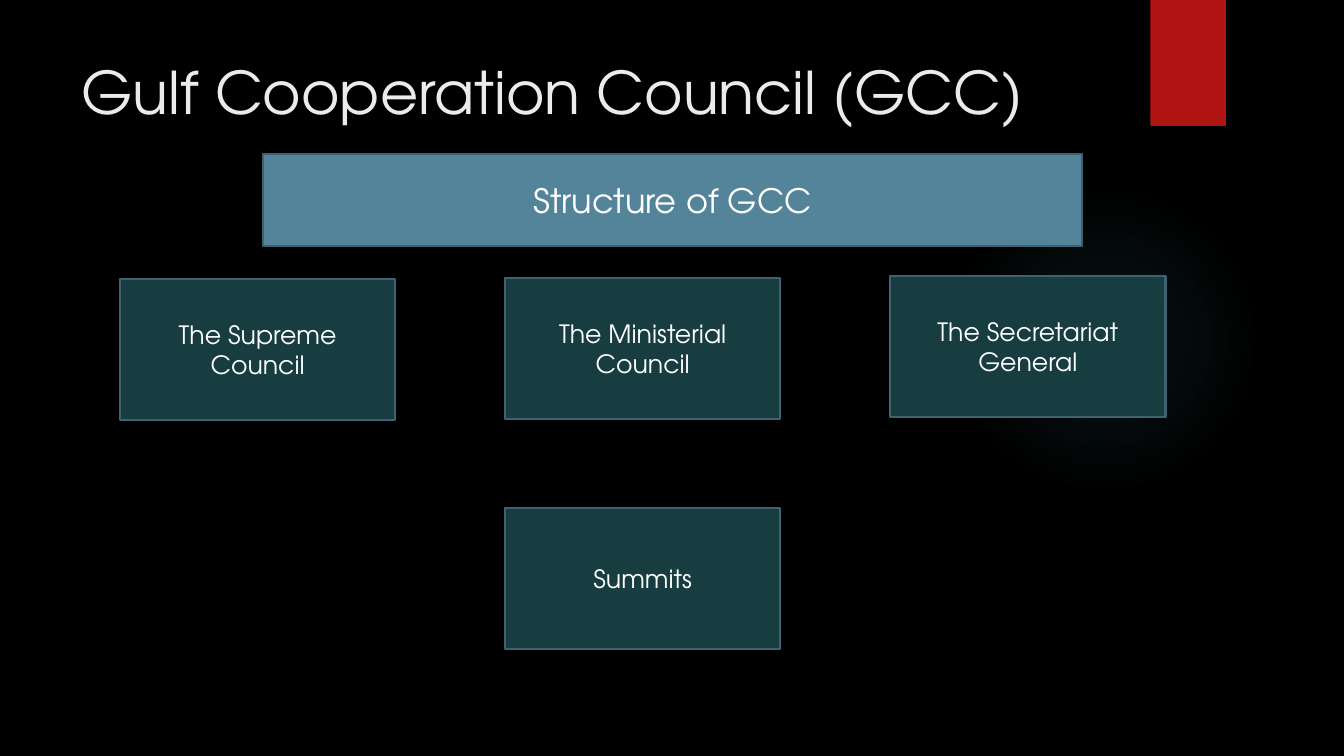
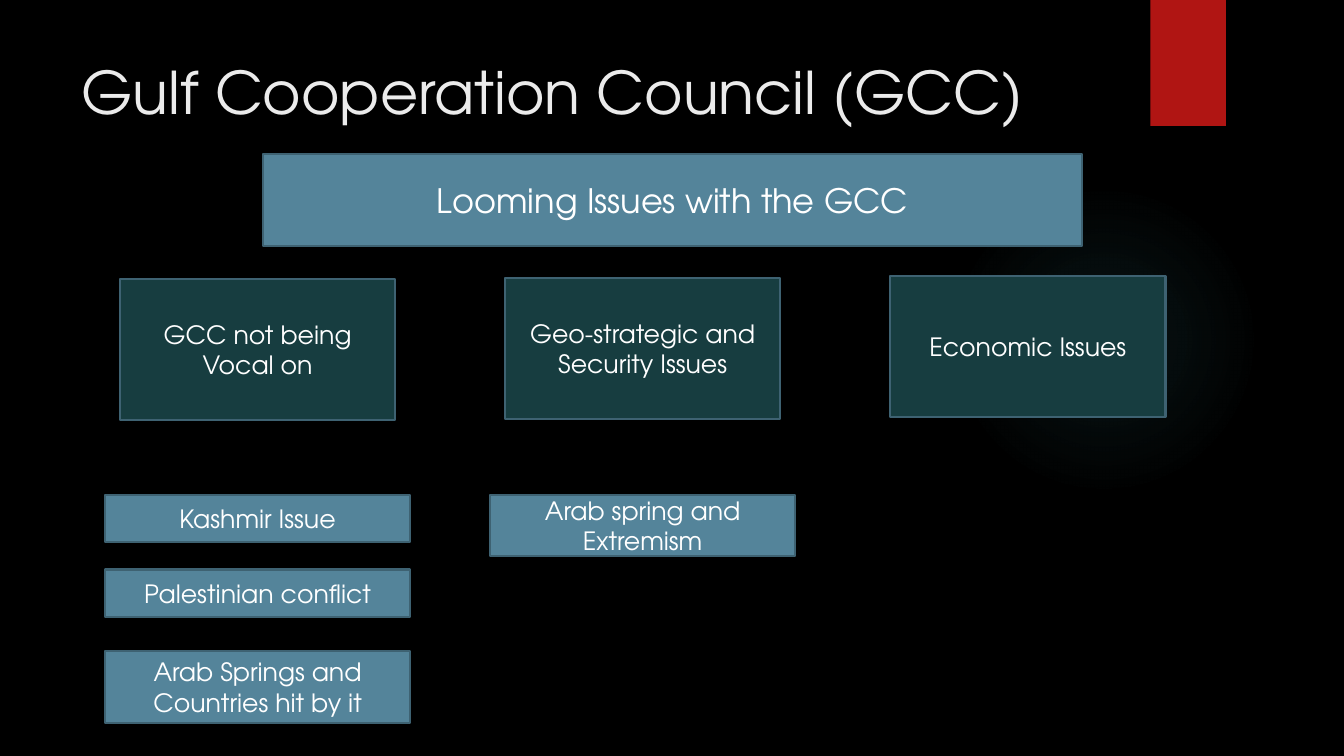
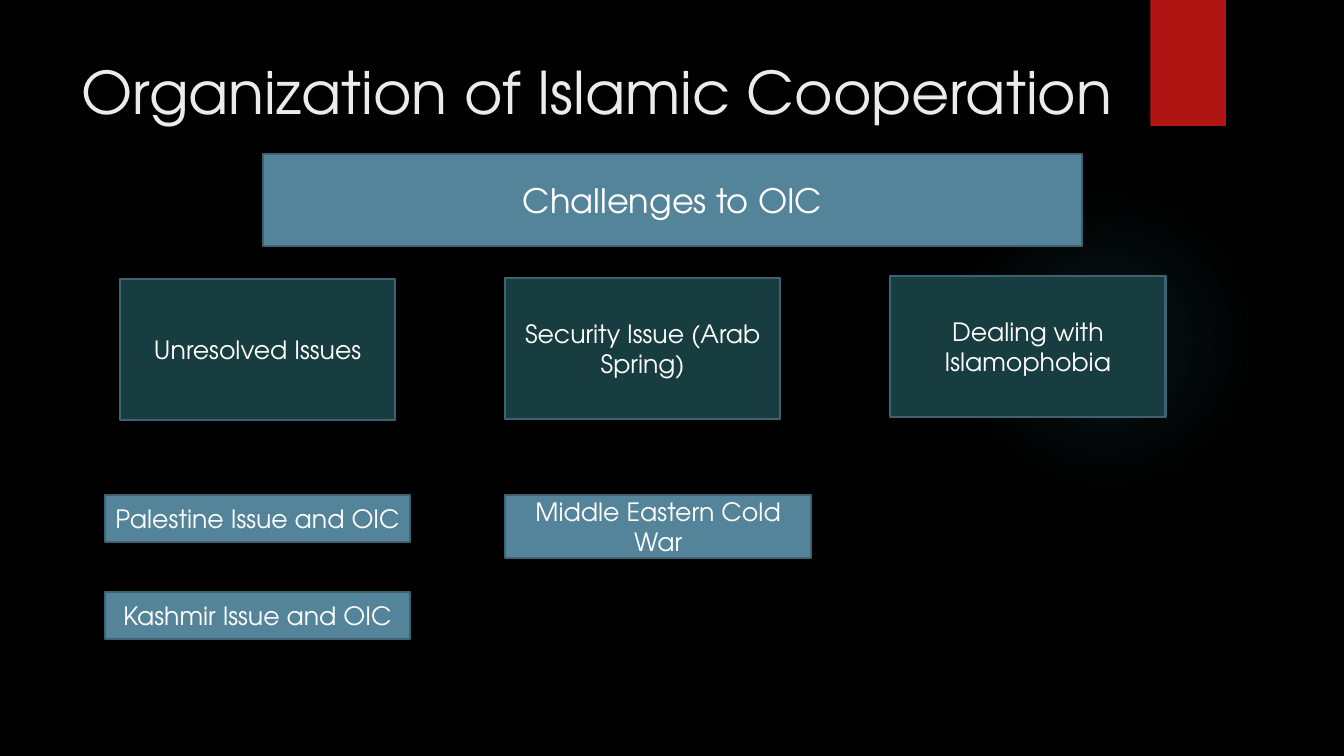
from dataclasses import dataclass

from pptx import Presentation
from pptx.dml.color import RGBColor
from pptx.enum import shapes, text
from pptx.oxml import parse_xml
from pptx.oxml.ns import nsdecls
from pptx.util import Inches, Pt

GCC = "Gulf Cooperation Council (GCC)"
OIC = "Organization of Islamic Cooperation"

TOPICS = [
    dict(title=GCC, heading="Structure of GCC",
         branches=["The Supreme Council", "The Ministerial Council", "The Secretariat General"],
         extra="Summits"),
    dict(title=GCC, heading="Looming Issues with the GCC",
         branches=["GCC not being Vocal on", "Geo-strategic and Security Issues", "Economic Issues"],
         details=[("Kashmir Issue", 0, 4.91, 0.47),
                  ("Palestinian conflict", 0, 5.65, 0.47),
                  ("Arab Springs and Countries hit by it", 0, 6.46, 0.71),
                  ("Arab spring and Extremism", 1, 4.91, 0.61)]),
    dict(title=OIC, heading="Challenges to OIC",
         branches=["Unresolved Issues", "Security Issue (Arab Spring)", "Dealing with Islamophobia"],
         details=[("Palestine Issue and OIC", 0, 4.91, 0.47),
                  ("Middle Eastern Cold War", 1.04, 4.91, 0.63),
                  ("Kashmir Issue and OIC", 0, 5.87, 0.47)]),
]


@dataclass(frozen=True)
class Theme:
    font: str = "TeX Gyre Adventor"
    background: str = "000000"
    title: str = "EBEBEB"
    label: str = "FFFFFF"
    steel: str = "54849A"
    teal: str = "173D40"
    outline: str = "3E6272"
    ribbon: str = "B01513"
    glow: str = "50B9C1"
    title_size: int = 42
    heading_size: int = 24
    label_size: int = 18
    outline_width: float = 1.5


THEME = Theme()
WIDTH, HEIGHT = 13.33, 7.5
COLUMN_LEFT, COLUMN_PITCH = 1.19, 3.82
BRANCH_TOP, BRANCH_RISE = 2.77, 0.015
BRANCH_WIDTH, BRANCH_HEIGHT = 2.73, 1.4
DETAIL_WIDTH = 3.03
EXTRA_TOP = 5.04
GLOW_STOPS = [(0, 7), (36, 6), (69, 0)]


def column_left(column, width=BRANCH_WIDTH):
    return COLUMN_LEFT + column * COLUMN_PITCH + (BRANCH_WIDTH - width) / 2


def add_plain(slide, kind, at, color):
    shape = slide.shapes.add_shape(kind, *map(Inches, at))
    shape.shadow.inherit = False
    shape.fill.solid()
    shape.fill.fore_color.rgb = RGBColor.from_string(color)
    shape.line.fill.background()
    return shape


def add_label(slide, words, at, *, fill=None, size=THEME.label_size, color=THEME.label,
              align=text.PP_ALIGN.CENTER, anchor=text.MSO_ANCHOR.MIDDLE):
    if fill:
        shape = add_plain(slide, shapes.MSO_SHAPE.RECTANGLE, at, fill)
        shape.line.color.rgb = RGBColor.from_string(THEME.outline)
        shape.line.width = Pt(THEME.outline_width)
    else:
        shape = slide.shapes.add_textbox(*map(Inches, at))
    frame = shape.text_frame
    frame.word_wrap = True
    frame.vertical_anchor = anchor
    frame.margin_left = frame.margin_right = Inches(0.1)
    paragraph = frame.paragraphs[0]
    paragraph.alignment = align
    run = paragraph.add_run()
    run.text = words
    run.font.name = THEME.font
    run.font.size = Pt(size)
    run.font.color.rgb = RGBColor.from_string(color)


def add_glow(slide):
    glow = add_plain(slide, shapes.MSO_SHAPE.OVAL, (9.41, 1.83, 3.08, 3.08), THEME.glow)
    stops = "".join(
        f'<a:gs pos="{place * 1000}"><a:srgbClr val="{THEME.glow}">'
        f'<a:alpha val="{alpha * 1000}"/></a:srgbClr></a:gs>'
        for place, alpha in GLOW_STOPS)
    gradient = parse_xml(
        f'<a:gradFill {nsdecls("a")} rotWithShape="1"><a:gsLst>{stops}</a:gsLst>'
        '<a:path path="circle"><a:fillToRect l="50000" t="50000" r="50000" b="50000"/></a:path>'
        '</a:gradFill>')
    properties = glow.element.spPr
    properties.replace(properties.find("{*}solidFill"), gradient)


def add_ribbon(slide):
    ribbon = add_plain(slide, shapes.MSO_SHAPE.RECTANGLE, (11.41, 0, 0.75, 1.25), THEME.ribbon)
    ribbon.element.spPr.find("{*}effectLst").append(parse_xml(
        f'<a:outerShdw {nsdecls("a")} blurRad="{Pt(3)}" dist="{Pt(2)}" dir="5400000" '
        'rotWithShape="0"><a:srgbClr val="000000"><a:alpha val="45000"/></a:srgbClr>'
        '</a:outerShdw>'))


def add_topic(deck, title, heading, branches, extra=None, details=()):
    slide = deck.slides.add_slide(deck.slide_layouts[6])
    add_glow(slide)
    add_ribbon(slide)
    add_label(slide, title, (0.71, 0.5, 10.52, 1.53), size=THEME.title_size, color=THEME.title,
              align=text.PP_ALIGN.LEFT, anchor=text.MSO_ANCHOR.TOP)
    add_label(slide, heading, (2.61, 1.53, 8.12, 0.91), fill=THEME.steel, size=THEME.heading_size)
    for column, branch in enumerate(branches):
        top = BRANCH_TOP - column * BRANCH_RISE
        add_label(slide, branch, (column_left(column), top, BRANCH_WIDTH, BRANCH_HEIGHT),
                  fill=THEME.teal)
    if extra:
        add_label(slide, extra, (column_left(1), EXTRA_TOP, BRANCH_WIDTH, BRANCH_HEIGHT),
                  fill=THEME.teal)
    for detail, column, top, height in details:
        add_label(slide, detail, (column_left(column, DETAIL_WIDTH), top, DETAIL_WIDTH, height),
                  fill=THEME.steel)


def main():
    deck = Presentation()
    deck.slide_width, deck.slide_height = Inches(WIDTH), Inches(HEIGHT)
    backdrop = deck.slide_master.background.fill
    backdrop.solid()
    backdrop.fore_color.rgb = RGBColor.from_string(THEME.background)
    for topic in TOPICS:
        add_topic(deck, **topic)
    deck.save("out.pptx")


if __name__ == "__main__":
    main()
